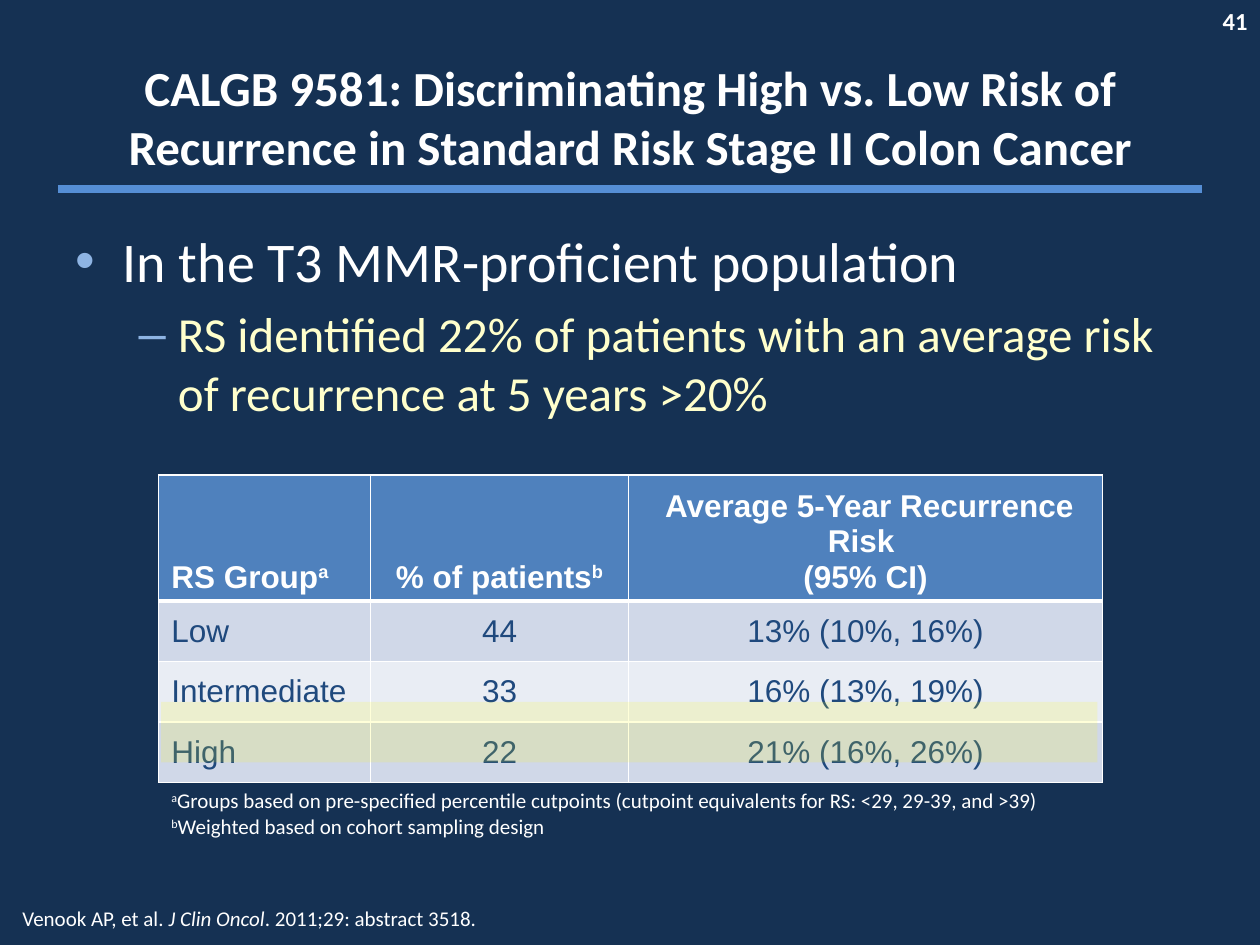
"""Build the slide on recurrence risk groups in stage II colon cancer."""
from lxml.etree import SubElement
from pptx import Presentation
from pptx.dml.color import RGBColor as RGB
from pptx.enum.shapes import MSO_CONNECTOR as LINK, MSO_SHAPE as SHAPE
from pptx.enum.text import MSO_ANCHOR as ANCHOR, MSO_AUTO_SIZE as FIT, PP_ALIGN as ALIGN
from pptx.oxml import parse_xml
from pptx.oxml.ns import nsdecls, qn
from pptx.util import Inches, Pt

NAVY = RGB(0x15, 0x31, 0x53)
WHITE = RGB(0xFF, 0xFF, 0xFF)
CREAM = RGB(0xFF, 0xFF, 0xCC)
RULE = RGB(0x55, 0x8E, 0xD5)
MARK = RGB(0x8E, 0xB4, 0xE3)
HEAD = RGB(0x4F, 0x81, 0xBD)
INK = RGB(0x1F, 0x49, 0x7D)
BANDS = [RGB(0xD0, 0xD8, 0xE8), RGB(0xE9, 0xED, 0xF4)]
YELLOW = RGB(0xFF, 0xFF, 0x00)
NO_STYLE = "{2D5ABB26-0587-4C30-8999-92F81FD0307C}"

deck = Presentation()
deck.slide_width, deck.slide_height = W, H = Inches(10), Inches(7.5)
slide = deck.slides.add_slide(deck.slide_layouts[1])
slide.background.fill.solid()
slide.background.fill.fore_color.rgb = NAVY
shapes = slide.shapes


def spot(x, y, w, h):
    """Turn inches on the 10 by 7.5 grid into shares of the slide."""
    return [int(W * x / 10), int(H * y / 7.5), int(W * w / 10), int(H * h / 7.5)]


def write(para, runs, size, color, face="Calibri", bold=False, align=ALIGN.LEFT):
    """Fill a paragraph with (text, style) runs in one font."""
    para.alignment = align
    font = para.font
    font.name, font.size, font.bold = face, Pt(size), bold
    font.color.rgb = color
    for text, style in runs:
        if text == "\n":
            para.add_line_break()
            continue
        run = para.add_run()
        run.text = text
        if style == "sup":
            run.font._element.set("baseline", "30000")
        elif style == "italic":
            run.font.italic = True


rule = shapes.add_connector(LINK.STRAIGHT, *spot(0.46, 1.5, 0, 0))
rule.end_x, rule.end_y = spot(9.54, 1.5, 0, 0)[:2]
rule.line.color.rgb = RULE
rule.line.width = Pt(4.5)
SubElement(rule._element.spPr, qn("a:effectLst"))

title = shapes.title
title.left, title.top, title.width, title.height = spot(0.5, 0.3, 9, 1.25)
frame = title.text_frame
frame.auto_size, frame.vertical_anchor = FIT.NONE, ANCHOR.MIDDLE
write(frame.paragraphs[0],
      [("CALGB 9581: Discriminating High vs. Low Risk of Recurrence "
        "in Standard Risk Stage II Colon Cancer", "")],
      28, WHITE, bold=True, align=ALIGN.CENTER)

body = slide.placeholders[1]
body.left, body.top, body.width, body.height = spot(0.5, 1.75, 9, 1.78)
frame = body.text_frame
frame.auto_size = FIT.NONE
points = [
    ("In the T3 MMR-proficient population", 32, WHITE),
    ("RS identified 22% of patients with an average risk "
     "of recurrence at 5 years >20%", 28, CREAM),
]
for level, (text, size, color) in enumerate(points):
    para = frame.add_paragraph() if level else frame.paragraphs[0]
    para.level = level
    tint = SubElement(para._p.get_or_add_pPr(), qn("a:buClr"))
    SubElement(tint, qn("a:srgbClr"), val=str(MARK))
    write(para, [(text, "")], size, color)

labels = [
    (spot(9.25, 0, 0.75, 0.4), [("41", "")], 14, True, ALIGN.RIGHT),
    (spot(0.08, 7.14, 5, 0.3),
     [("Venook AP, et al. ", ""), ("J Clin Oncol", "italic"),
      (". 2011;29: abstract 3518.", "")], 12, False, ALIGN.LEFT),
]
for place, runs, size, bold, align in labels:
    frame = shapes.add_textbox(*place).text_frame
    frame.word_wrap = True
    write(frame.paragraphs[0], runs, size, WHITE, bold=bold, align=align)

rows = [
    [[("RS Group", ""), ("a", "sup")],
     [("% of patients", ""), ("b", "sup")],
     [(" Average 5-Year Recurrence Risk ", ""), ("\n", ""), ("(95% CI)", "")]],
    [[("Low", "")], [("44", "")], [("13% (10%, 16%)", "")]],
    [[("Intermediate", "")], [("33", "")], [("16% (13%, 19%)", "")]],
    [[("High", "")], [("22", "")], [("21% (16%, 26%)", "")]],
]
table = shapes.add_table(5, 3, *spot(1.26, 3.77, 7.49, 2.76)).table
table._tbl.tblPr.find(qn("a:tableStyleId")).text = NO_STYLE
table.first_row = table.horz_banding = False
for col, wide in zip(table.columns, [1.68, 2.05, 3.76]):
    col.width = Inches(wide)
for row, high in zip(table.rows, [0.84] + [0.48] * 4):
    row.height = Inches(high)

for r, row in enumerate(rows):
    for c, runs in enumerate(row):
        cell = table.cell(r, c)
        cell.vertical_anchor = ANCHOR.MIDDLE if r else ANCHOR.BOTTOM
        write(cell.text_frame.paragraphs[0], runs, 18, INK if r else WHITE,
              "Arial", r == 0, ALIGN.CENTER if c else ALIGN.LEFT)
        for side in ("L", "R", "T", "B"):
            thick = 3 if (r, side) in [(0, "B"), (1, "T")] else 1
            cell._tc.get_or_add_tcPr().append(parse_xml(
                f'<a:ln{side} {nsdecls("a")} w="{Pt(thick)}"><a:solidFill>'
                f'<a:srgbClr val="{WHITE}"/></a:solidFill></a:ln{side}>'))
        cell.fill.solid()
        cell.fill.fore_color.rgb = BANDS[(r - 1) % 2] if r else HEAD

note = table.cell(4, 0)
note.merge(table.cell(4, 2))
note.vertical_anchor = ANCHOR.MIDDLE
write(note.text_frame.paragraphs[0],
      [("a", "sup"),
       ("Groups based on pre-specified percentile cutpoints "
        "(cutpoint equivalents for RS: <29, 29-39, and >39)", ""),
       ("\n", ""), ("b", "sup"),
       ("Weighted based on cohort sampling design", "")], 12, WHITE)

glow = shapes.add_shape(SHAPE.RECTANGLE, *spot(1.28, 5.57, 7.43, 0.48))
glow.shadow.inherit = False
glow.line.fill.background()
glow.fill.solid()
glow.fill.fore_color.rgb = YELLOW
shade = glow._element.spPr.find(qn("a:solidFill")).find(qn("a:srgbClr"))
SubElement(shade, qn("a:alpha"), val="15000")

deck.save("out.pptx")
